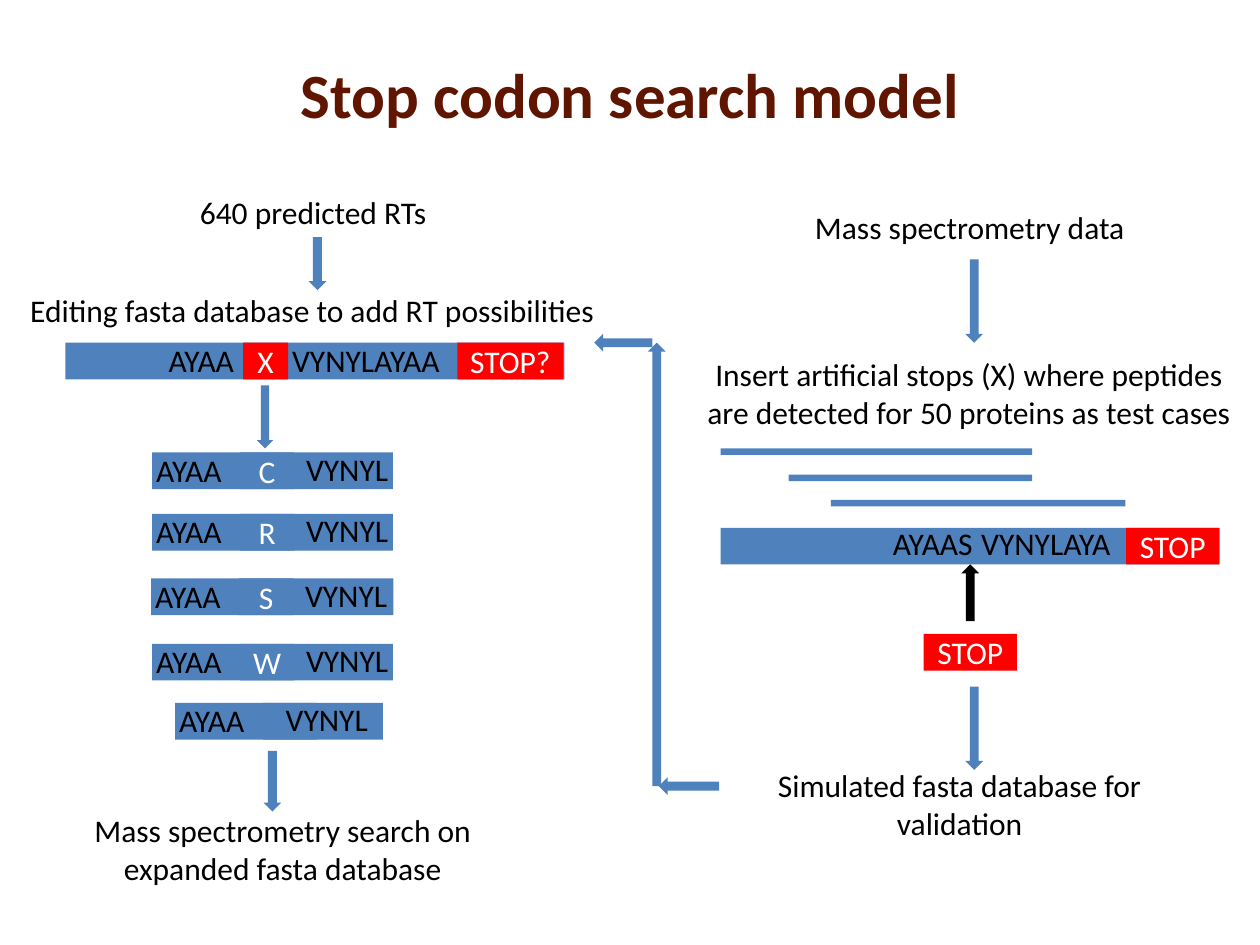
from pptx import Presentation
from pptx.dml.color import RGBColor
from pptx.enum.shapes import MSO_SHAPE
from pptx.enum.text import MSO_ANCHOR, PP_ALIGN
from pptx.util import Cm, Pt

BLUE, RED, BLACK, WHITE = "4F81BD", "FF0000", "000000", "FFFFFF"
BAR_HEIGHT = 0.74
LABEL_RISE = 0.18  # sequence labels start this far above their bar


def add_block(left, top, width, height, color=BLUE, text="",
              kind=MSO_SHAPE.RECTANGLE):
    block = slide.shapes.add_shape(kind, Cm(left), Cm(top), Cm(width), Cm(height))
    block.shadow.inherit = False
    block.fill.solid()
    block.fill.fore_color.rgb = RGBColor.from_string(color)
    block.line.fill.background()
    if text:
        write(block.text_frame, text, WHITE, PP_ALIGN.CENTER, wrap=False)
        block.text_frame.vertical_anchor = MSO_ANCHOR.MIDDLE


def write(frame, text, color=BLACK, align=PP_ALIGN.LEFT, wrap=True, size=18, bold=False):
    frame.word_wrap = wrap
    frame.text = text
    for paragraph in frame.paragraphs:
        paragraph.alignment = align
        paragraph.font.name = "Calibri"
        paragraph.font.size = Pt(size)
        paragraph.font.bold = bold
        paragraph.font.color.rgb = RGBColor.from_string(color)


presentation = Presentation()
presentation.slide_width, presentation.slide_height = Cm(25.4), Cm(19.05)
slide = presentation.slides.add_slide(presentation.slide_layouts[5])

# Title
title = slide.shapes.title
title.left, title.top, title.width, title.height = Cm(1.27), Cm(0.76), Cm(22.86), Cm(2.24)
title.text_frame.vertical_anchor = MSO_ANCHOR.MIDDLE
write(title.text_frame, "Stop codon search model", "5F1500", PP_ALIGN.CENTER,
      size=36, bold=True)

# Protein bars, peptides and stop codons
for left, top, width, height, color, text in [
    (1.32, 6.91, 10.06, BAR_HEIGHT, BLUE, ""),
    (4.9, 6.91, 0.91, BAR_HEIGHT, RED, "X"),
    (9.22, 6.91, 2.14, BAR_HEIGHT, RED, "STOP?"),
    (14.53, 10.64, 10.06, BAR_HEIGHT, BLUE, ""),
    (22.7, 10.64, 1.88, BAR_HEIGHT, RED, "STOP"),
    (18.62, 12.78, 1.88, BAR_HEIGHT, RED, "STOP"),
    (14.53, 9.04, 6.28, 0.13, BLUE, ""),
    (15.9, 9.57, 4.91, 0.13, BLUE, ""),
    (16.75, 10.08, 5.94, 0.13, BLUE, ""),
]:
    add_block(left, top, width, height, color, text)

# Flow arrows
for kind, left, top, width, height, color in [
    (MSO_SHAPE.DOWN_ARROW, 6.22, 4.78, 0.36, 1.07, BLUE),
    (MSO_SHAPE.DOWN_ARROW, 5.18, 7.77, 0.33, 1.27, BLUE),
    (MSO_SHAPE.DOWN_ARROW, 5.31, 15.14, 0.36, 1.22, BLUE),
    (MSO_SHAPE.DOWN_ARROW, 19.46, 5.23, 0.36, 1.68, BLUE),
    (MSO_SHAPE.DOWN_ARROW, 19.46, 13.84, 0.36, 1.68, BLUE),
    (MSO_SHAPE.UP_ARROW, 19.38, 11.38, 0.36, 1.14, BLACK),
    (MSO_SHAPE.UP_ARROW, 13.06, 6.91, 0.36, 8.94, BLUE),
    (MSO_SHAPE.LEFT_ARROW, 13.28, 15.67, 1.22, 0.36, BLUE),
    (MSO_SHAPE.LEFT_ARROW, 11.98, 6.73, 1.17, 0.36, BLUE),
]:
    add_block(left, top, width, height, color, kind=kind)

# Step captions and the sequences on the protein bars
labels = [
    (3.78, 3.76, 5.21, "640 predicted RTs", PP_ALIGN.LEFT, False),
    (0.36, 5.74, 12.07, "Editing fasta database to add RT possibilities",
     PP_ALIGN.LEFT, False),
    (1.6, 16.23, 8.2, "Mass spectrometry search on\nexpanded fasta database",
     PP_ALIGN.CENTER, False),
    (16.18, 4.06, 6.83, "Mass spectrometry data", PP_ALIGN.LEFT, False),
    (13.92, 7.04, 11.23, "Insert artificial stops (X) where peptides "
     "are detected for 50 proteins as test cases", PP_ALIGN.CENTER, True),
    (14.38, 15.32, 9.93, "Simulated fasta database for validation",
     PP_ALIGN.CENTER, True),
    (3.15, 6.76, 3.89, "AYAA", PP_ALIGN.LEFT, True),
    (5.64, 6.76, 3.89, "VYNYLAYAA", PP_ALIGN.LEFT, True),
    (17.75, 10.44, 3.91, "AYAAS", PP_ALIGN.LEFT, True),
    (19.53, 10.44, 3.91, "VYNYLAYA", PP_ALIGN.LEFT, True),
]

# Readthrough variants, the last one shorter and without a residue
for residue, top, left, width, tail_left in [
    ("C", 9.12, 3.07, 4.85, 5.92),
    ("R", 10.36, 3.07, 4.85, 5.92),
    ("S", 11.66, 3.05, 4.88, 5.9),
    ("W", 12.98, 3.07, 4.85, 5.92),
    ("", 14.17, 3.53, 4.19, 5.51),
]:
    add_block(left, top, width, BAR_HEIGHT)
    add_block(left + 1.77, top, 1.09, BAR_HEIGHT, text=residue)
    labels += [
        (left - 0.17, top - LABEL_RISE + 0.02, 3.89, "AYAA", PP_ALIGN.LEFT, True),
        (tail_left, top - LABEL_RISE, 3.89, "VYNYL", PP_ALIGN.LEFT, True),
    ]

for left, top, width, text, align, wrap in labels:
    label = slide.shapes.add_textbox(Cm(left), Cm(top), Cm(width), Cm(1.02))
    write(label.text_frame, text, align=align, wrap=wrap)

presentation.save("out.pptx")
